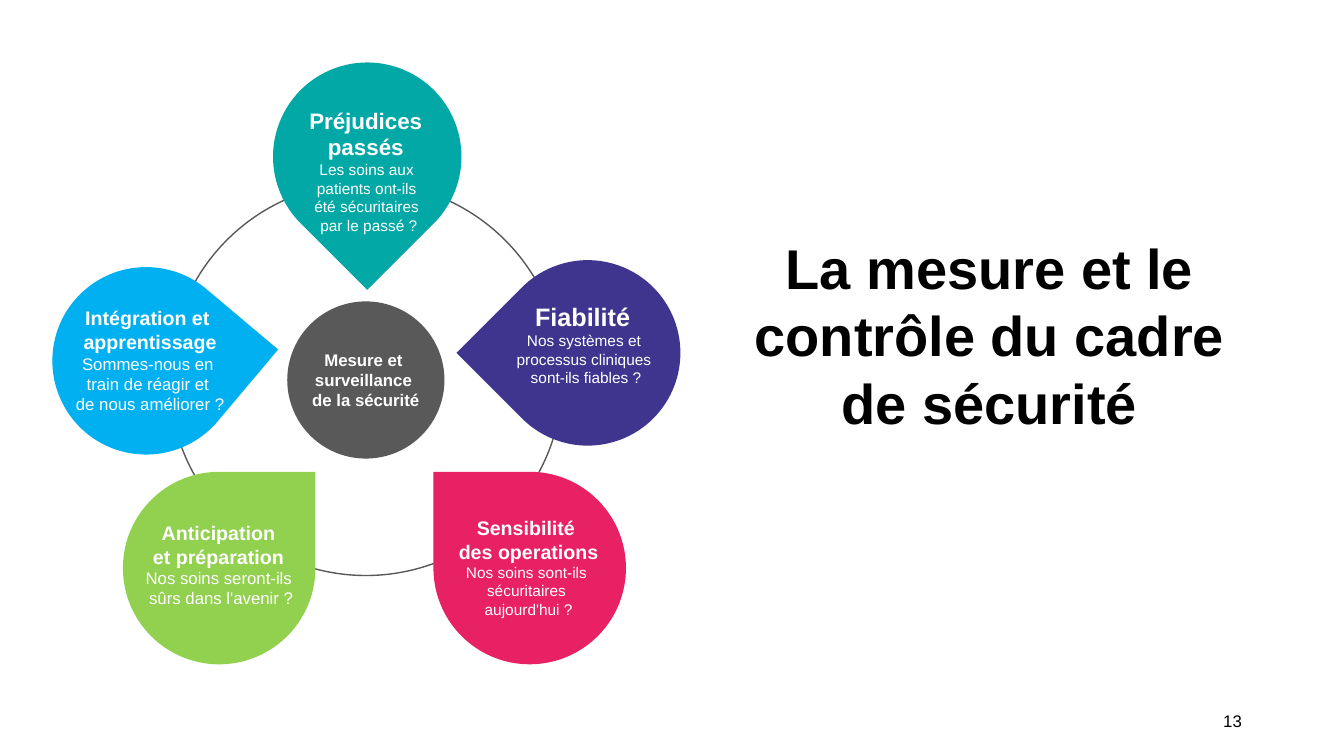
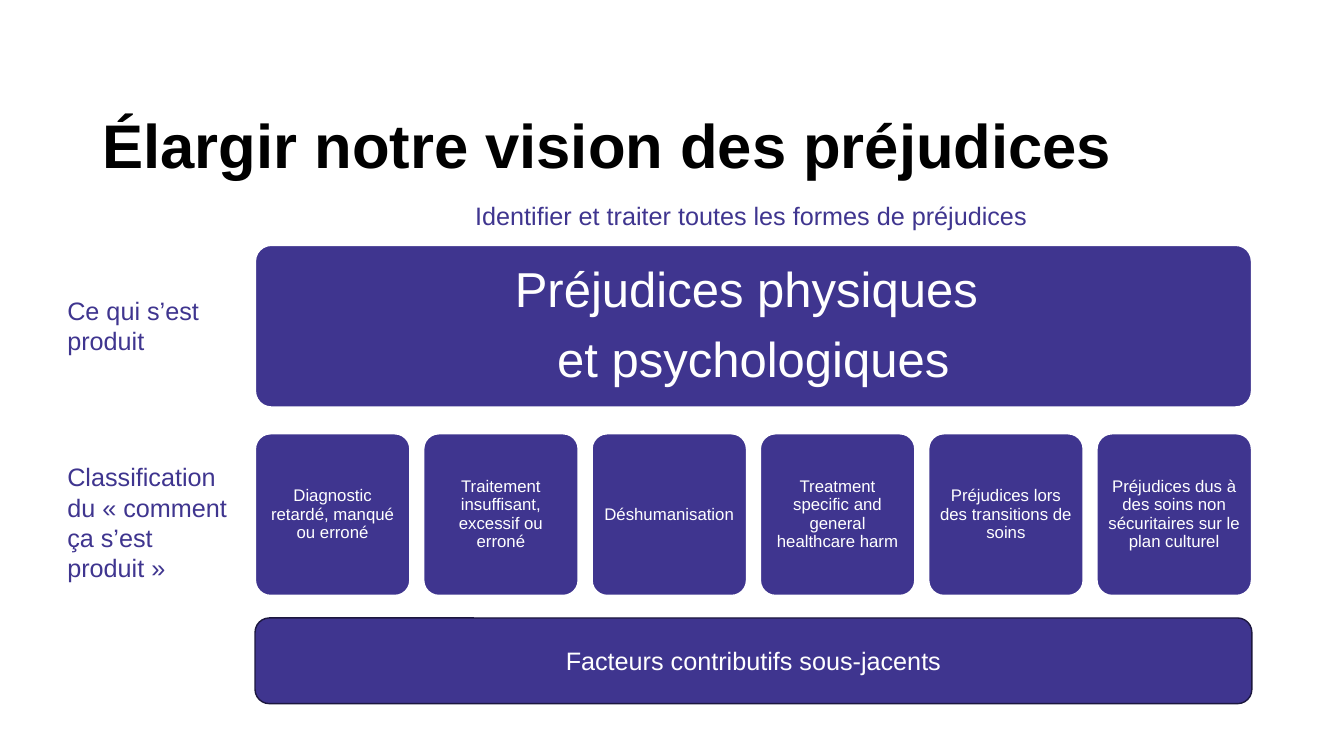
from pptx import Presentation
from pptx.dml.color import RGBColor
from pptx.enum.shapes import MSO_SHAPE
from pptx.enum.text import MSO_ANCHOR, PP_ALIGN
from pptx.util import Pt

WHITE = RGBColor(0xFF, 0xFF, 0xFF)
BLACK = RGBColor(0x00, 0x00, 0x00)
GREY = RGBColor(0x59, 0x59, 0x59)
TEAL = RGBColor(0x02, 0xA8, 0xA5)
PURPLE = RGBColor(0x3F, 0x35, 0x8F)
NAVY = RGBColor(0x1C, 0x17, 0x3F)
PINK = RGBColor(0xE8, 0x20, 0x64)
GREEN = RGBColor(0x92, 0xD0, 0x50)
BLUE = RGBColor(0x00, 0xB0, 0xF0)

LEFT, CENTER, RIGHT = PP_ALIGN.LEFT, PP_ALIGN.CENTER, PP_ALIGN.RIGHT
TOP, MIDDLE, BOTTOM = MSO_ANCHOR.TOP, MSO_ANCHOR.MIDDLE, MSO_ANCHOR.BOTTOM


class Deck:
    FONT = "Arial"

    def __init__(self):
        self.prs = Presentation()
        self.prs.slide_width, self.prs.slide_height = Pt(960), Pt(540)
        self.s = None

    def new_slide(self):
        self.s = self.prs.slides.add_slide(self.prs.slide_layouts[6])

    def fill_text(self, sp, paras, color=WHITE, align=CENTER, anchor=MIDDLE,
                  wrap=True, margins=None, spacing=None, after=0):
        """Fill sp with paragraphs, each a list of (text, size, bold) runs."""
        tf = sp.text_frame
        tf.word_wrap = wrap
        tf.vertical_anchor = anchor
        if margins is not None:
            tf.margin_left = tf.margin_right = Pt(margins)
            tf.margin_top = tf.margin_bottom = Pt(margins)
        for i, runs in enumerate(paras):
            p = tf.add_paragraph() if i else tf.paragraphs[0]
            p.alignment = align
            p.space_after = Pt(after)
            if spacing:
                p.line_spacing = spacing
            for text, size, bold in runs:
                for j, line in enumerate(text.split("\n")):
                    if j:
                        p.add_line_break()
                    if line:
                        r = p.add_run()
                        r.text = line
                        r.font.name, r.font.size = self.FONT, Pt(size)
                        r.font.bold, r.font.color.rgb = bold, color

    def text(self, x, y, w, h, paras, **style):
        sp = self.s.shapes.add_textbox(Pt(x), Pt(y), Pt(w), Pt(h))
        self.fill_text(sp, paras, **style)

    def title(self, x, y, w, h, text, size, **style):
        self.text(x, y, w, h, [[(text, size, True)]], color=BLACK, **style)

    def shape(self, kind, x, y, w, h, fill=None, line=None, line_width=1):
        sp = self.s.shapes.add_shape(kind, Pt(x), Pt(y), Pt(w), Pt(h))
        sp.shadow.inherit = False
        if fill is None:
            sp.fill.background()
        else:
            sp.fill.solid()
            sp.fill.fore_color.rgb = fill
        if line is None:
            sp.line.fill.background()
        else:
            sp.line.color.rgb = line
            sp.line.width = Pt(line_width)
        return sp

    def drop(self, x, y, size, angle, fill, label_center, label_top, paras):
        """Teardrop with an upright label over it."""
        sp = self.shape(MSO_SHAPE.TEAR, x, y, size, size, fill)
        sp.rotation = angle
        self.text(label_center - size / 2, label_top, size, 80, paras,
                  anchor=TOP, wrap=False)

    def card(self, x, y, w, h, lines, size, margins):
        sp = self.shape(MSO_SHAPE.ROUNDED_RECTANGLE, x, y, w, h,
                        PURPLE, WHITE, 1.5)
        sp.adjustments[0] = 0.1
        self.fill_text(sp, [[(line, size, False)] for line in lines],
                       margins=margins, spacing=0.9, after=size * 0.35)

    def caption(self, x, y, w, h, text, align=LEFT):
        self.text(x, y, w, h, [[(text, 18, False)]], color=PURPLE,
                  align=align, anchor=TOP)


def framework_slide(deck):
    deck.new_slide()
    deck.text(678.2, 500.4, 216, 28.8, [[("13", 12, False)]],
              color=BLACK, align=RIGHT)
    deck.shape(MSO_SHAPE.OVAL, 121, 130.3, 280.8, 280.8, line=GREY)
    drops = [
        (195, 44.6, 134.6, 135, TEAL, 263.5, 72.7,
         [[("Préjudices \npassés \n", 16, True),
           ("Les soins aux \npatients ont-ils \nété sécuritaires \n"
            "par le passé ?", 11, False)]]),
        (353.5, 185.8, 132.5, 225, PURPLE, 418.7, 211.7,
         [[("Fiabilité ", 18, True)],
          [("Nos systèmes et \nprocessus cliniques \nsont-ils fiables ?",
            11, False)]]),
        (309.6, 337, 137.5, 270, PINK, 377.6, 365,
         [[("Sensibilité \ndes operations", 14, True)],
          [("Nos soins sont-ils \nsécuritaires \naujourd'hui ?",
            11, False)]]),
        (87.8, 337, 137.5, 0, GREEN, 158, 368.6,
         [[("Anticipation \net préparation \n", 14, True),
           ("Nos soins seront-ils \nsûrs dans l'avenir ?", 12, False)]]),
        (37.4, 190.8, 133.9, 40.1, BLUE, 107.3, 215.3,
         [[("Intégration et \napprentissage\n", 14, True),
           ("Sommes-nous en \ntrain de réagir et \nde nous améliorer ?",
            12, False)]]),
    ]
    for drop in drops:
        deck.drop(*drop)
    hub = deck.shape(MSO_SHAPE.OVAL, 205.2, 215.3, 112.3, 112.3, GREY)
    deck.fill_text(hub, [[("Mesure et \nsurveillance \nde la sécurité",
                           12, True)]], wrap=False, margins=0)
    deck.title(519.1, 163.4, 375.1, 152.6,
               "La mesure et le contrôle du cadre de sécurité", 40, anchor=TOP)


def harm_slide(deck):
    deck.new_slide()
    left, width, height, gap = 182.2, 712, 116, 9.4
    causes = [
        "Diagnostic retardé, manqué ou erroné",
        "Traitement insuffisant, excessif ou erroné",
        "Déshumanisation",
        "Treatment specific and general healthcare harm",
        "Préjudices lors des transitions de soins",
        "Préjudices dus à des soins non sécuritaires sur le plan culturel",
    ]
    bar = deck.shape(MSO_SHAPE.ROUNDED_RECTANGLE, left, 441.4, width, 61.2,
                     PURPLE, NAVY)
    deck.fill_text(bar, [[("Facteurs contributifs sous-jacents", 18, False)]])
    deck.card(left, 175, width, height,
              ["Préjudices physiques ", "et psychologiques"], 35, 10.8)
    card_width = (width - gap * (len(causes) - 1)) / len(causes)
    for i, cause in enumerate(causes):
        deck.card(left + i * (card_width + gap), 309.6, card_width, height,
                  [cause], 12, 3.6)
    deck.caption(41, 207.4, 123, 51, "Ce qui s’est produit")
    deck.caption(41, 326.2, 129, 117,
                 "Classification du « comment ça s’est produit »")
    deck.caption(170, 139.7, 733, 29,
                 "Identifier et traiter toutes les formes de préjudices", CENTER)
    deck.title(66.2, 28.8, 828, 104.4, "Élargir notre vision des préjudices",
               44, align=LEFT, anchor=BOTTOM, spacing=0.9)


def main():
    deck = Deck()
    framework_slide(deck)
    harm_slide(deck)
    deck.prs.save("out.pptx")


if __name__ == "__main__":
    main()
